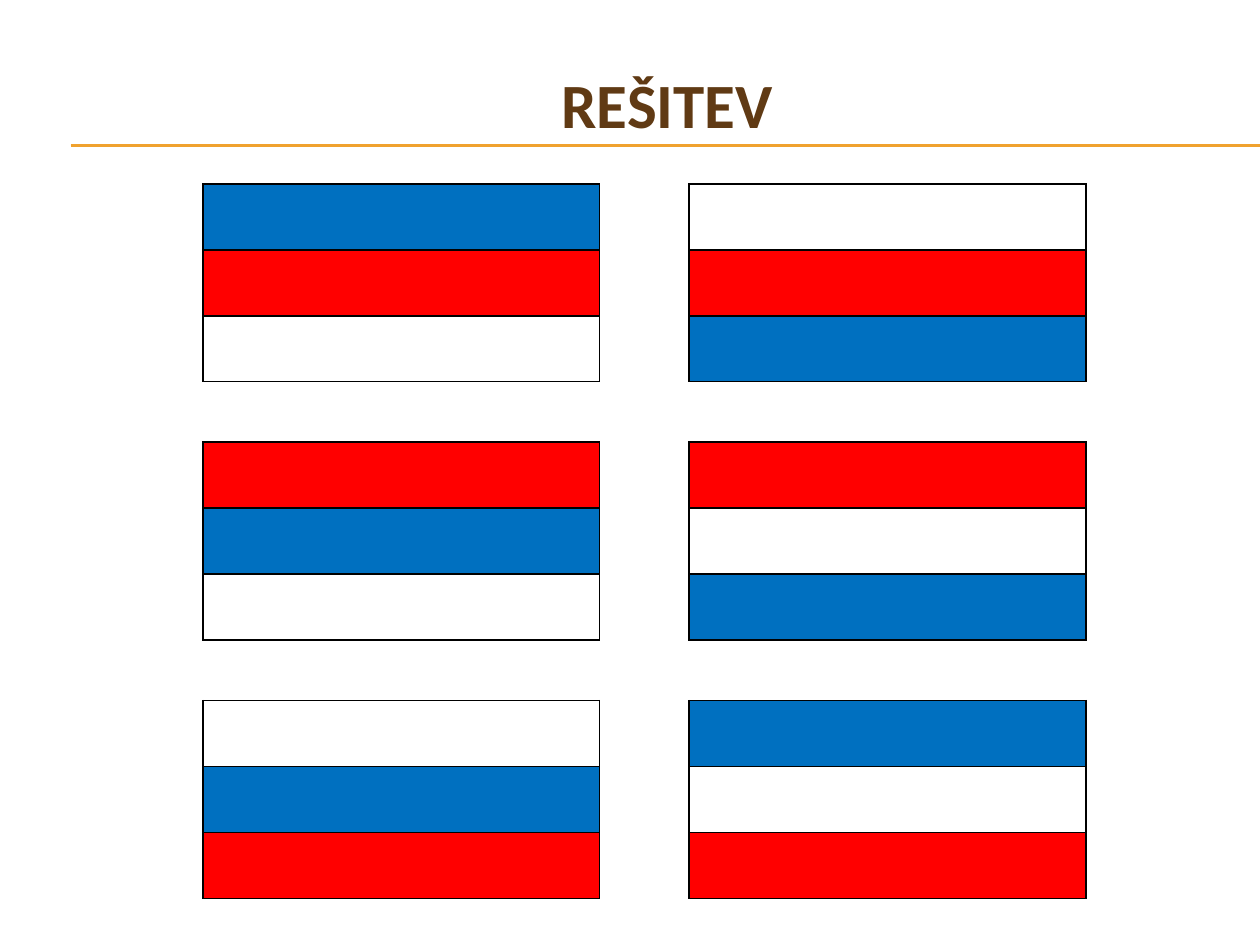
import lxml.etree
import pptx
import pptx.dml.color
import pptx.enum.text
import pptx.oxml.ns
import pptx.util

TITLE = "REŠITEV"
BLUE, RED, WHITE = "0070C0", "FF0000", "FFFFFF"
FLAG_ROWS = [
    [(BLUE, RED, WHITE), (WHITE, RED, BLUE)],
    [(RED, BLUE, WHITE), (RED, WHITE, BLUE)],
    [(WHITE, BLUE, RED), (BLUE, WHITE, RED)],
]

GRID_LEFT, GRID_TOP = 1.61, 1.46
COLUMN_STEP, ROW_STEP = 3.86, 2.05
FLAG_WIDTH, FLAG_HEIGHT = 3.15, 1.57
RULE_LEFT, RULE_TOPS = 0.56, (1.15, 1.16)
SLIDE_WIDTH, SLIDE_HEIGHT = 10, 7.5

inches = pptx.util.Inches
qn = pptx.oxml.ns.qn


def color(value):
    return pptx.dml.color.RGBColor.from_string(value)


def add_title(slide):
    title = slide.shapes.title
    title.left, title.top = inches(0.28), inches(0.36)
    title.width, title.height = inches(9.5), inches(0.92)
    frame = title.text_frame
    frame.vertical_anchor = pptx.enum.text.MSO_ANCHOR.MIDDLE
    paragraph = frame.paragraphs[0]
    paragraph.alignment = pptx.enum.text.PP_ALIGN.CENTER
    properties = paragraph._p.get_or_add_pPr()
    properties.set("marL", str(inches(0.53)))
    properties.set("indent", "0")
    run = paragraph.add_run()
    run.text = TITLE
    run.font.name = "Calibri"
    run.font.size = pptx.util.Pt(36)
    run.font.bold = True
    run.font.color.rgb = color("603A14")


def add_rule(slide, top):
    rule = slide.shapes.add_connector(
        pptx.enum.shapes.MSO_CONNECTOR.STRAIGHT,
        inches(RULE_LEFT), inches(top), inches(SLIDE_WIDTH), inches(top))
    rule.line.color.rgb = color("F0A22E")
    rule.line.width = pptx.util.Pt(0.75)
    lxml.etree.SubElement(rule._element.spPr, qn("a:effectLst"))


def add_borders(cell):
    properties = cell._tc.get_or_add_tcPr()
    for side in ("a:lnL", "a:lnR", "a:lnT", "a:lnB"):
        border = lxml.etree.SubElement(properties, qn(side), w=str(pptx.util.Pt(1)))
        fill = lxml.etree.SubElement(border, qn("a:solidFill"))
        lxml.etree.SubElement(fill, qn("a:srgbClr"), val="000000")


def add_flag(slide, left, top, stripes):
    table = slide.shapes.add_table(
        len(stripes), 1, inches(left), inches(top),
        inches(FLAG_WIDTH), inches(FLAG_HEIGHT)).table
    table.first_row = table.horz_banding = False
    for row, stripe in enumerate(stripes):
        cell = table.cell(row, 0)
        add_borders(cell)
        cell.fill.solid()
        cell.fill.fore_color.rgb = color(stripe)


def main():
    presentation = pptx.Presentation()
    presentation.slide_width = inches(SLIDE_WIDTH)
    presentation.slide_height = inches(SLIDE_HEIGHT)
    slide = presentation.slides.add_slide(presentation.slide_layouts[5])
    for top in RULE_TOPS:
        add_rule(slide, top)
    add_title(slide)
    for row, flags in enumerate(FLAG_ROWS):
        for column, stripes in enumerate(flags):
            add_flag(slide, GRID_LEFT + column * COLUMN_STEP,
                     GRID_TOP + row * ROW_STEP, stripes)
    presentation.save("out.pptx")


if __name__ == "__main__":
    main()
